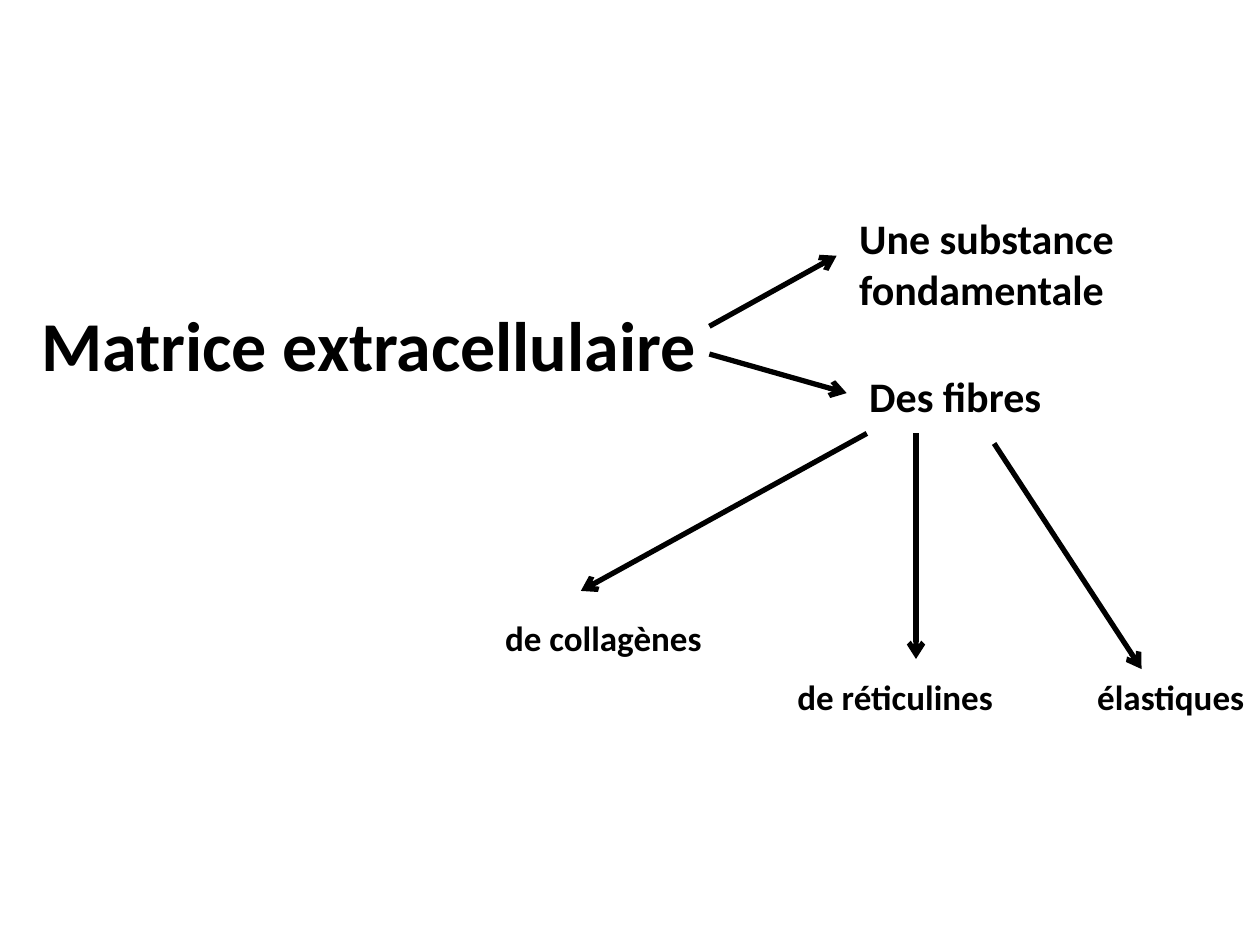
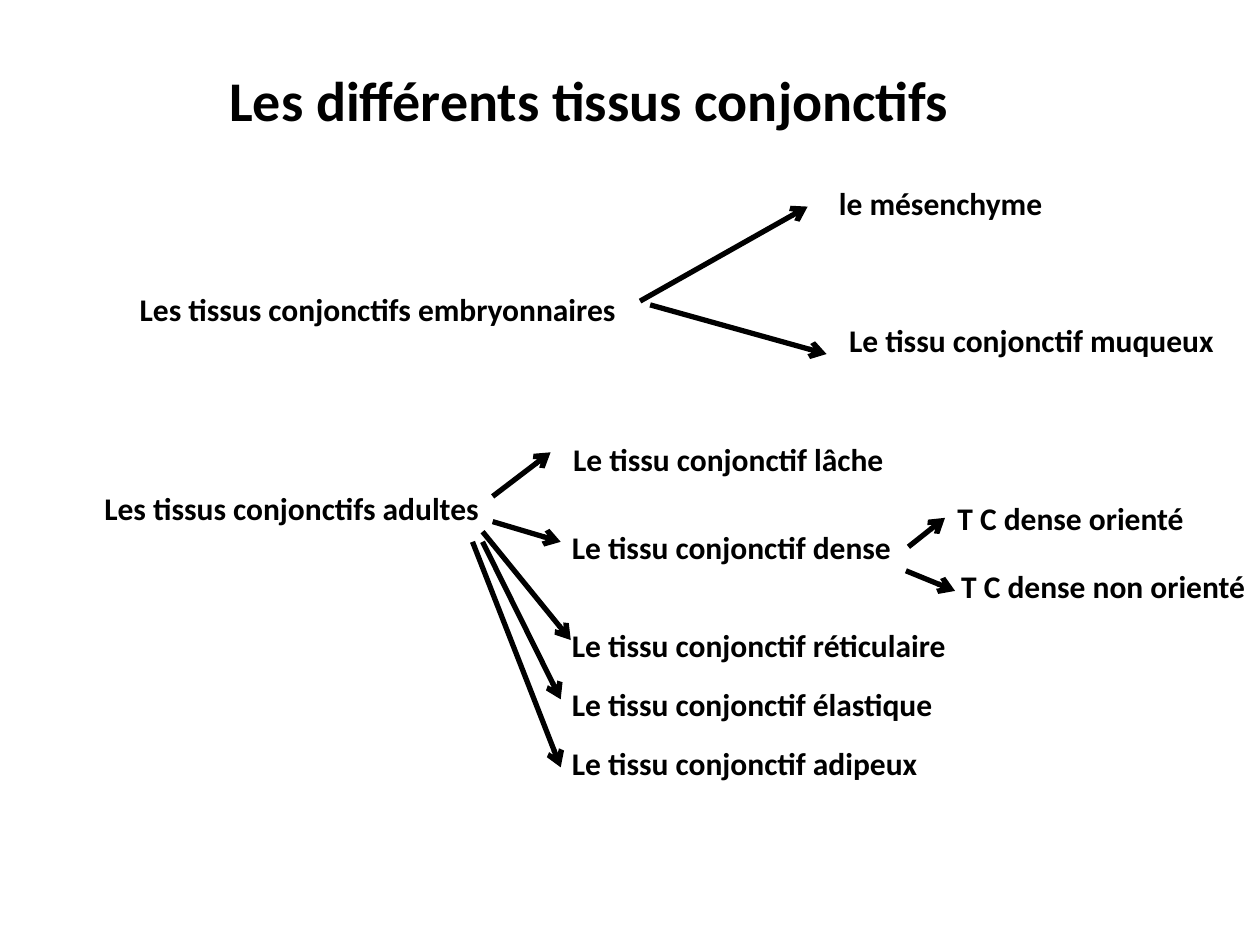
"""Build two diagram slides on the extracellular matrix and connective tissues."""
import pptx
import pptx.dml.color
import pptx.enum.shapes
import pptx.enum.text
import pptx.oxml.ns
import pptx.util
from lxml import etree

Inches = pptx.util.Inches
Anchor = pptx.enum.text.MSO_ANCHOR
BLACK = pptx.dml.color.RGBColor(0x00, 0x00, 0x00)
WHITE = pptx.dml.color.RGBColor(0xFF, 0xFF, 0xFF)
FONT_FORMAT = {"name": "Calibri", "bold": True}
LABEL_HEIGHT = 0.4
ADULT_LEFT = 3.44
ADULT_ROW_TOP = 4.92
ADULT_ROW_STEP = 0.47


def write_label(shape, frame, text, size, level=0, wrap=False, anchor=Anchor.TOP):
    """Place a text shape and give it one bold line of text."""
    for side, length in zip(("left", "top", "width", "height"), frame):
        setattr(shape, side, Inches(length))
    frame_format = {
        "text": text,
        "word_wrap": wrap,
        "vertical_anchor": anchor,
        "auto_size": pptx.enum.text.MSO_AUTO_SIZE.SHAPE_TO_FIT_TEXT,
    }
    for name, value in frame_format.items():
        setattr(shape.text_frame, name, value)
    paragraph = shape.text_frame.paragraphs[0]
    paragraph.level = level
    paragraph.alignment = pptx.enum.text.PP_ALIGN.LEFT
    font = paragraph.runs[0].font
    for name, value in FONT_FORMAT.items():
        setattr(font, name, value)
    font.size = pptx.util.Pt(size)
    font.color.rgb = BLACK


def add_arrow(slide, start, end):
    """Draw a straight black arrow and return it."""
    points = [Inches(length) for length in (*start, *end)]
    arrow = slide.shapes.add_connector(pptx.enum.shapes.MSO_CONNECTOR.STRAIGHT, *points)
    arrow.line.color.rgb = BLACK
    arrow.line.width = pptx.util.Pt(3)
    properties = arrow.element.spPr
    outline = properties.find(pptx.oxml.ns.qn("a:ln"))
    etree.SubElement(outline, pptx.oxml.ns.qn("a:tailEnd"), type="arrow")
    etree.SubElement(properties, pptx.oxml.ns.qn("a:effectLst"))
    return arrow


matrix = {
    "title": ("Matrice extracellulaire", (0.23, 2.34, 5.46, 0.77), 40),
    "labels": [
        ("Une substance fondamentale", (6.72, 1.64, 3.28, 0.91), 24, 0, True),
        ("Des fibres", (6.8, 2.89, 2.34, 0.5), 24, 0, True, Anchor.MIDDLE),
        ("de collagènes", (3.91, 4.84, 1.78, 0.44), 20),
        ("de réticulines", (5.23, 5.31, 2.78, 0.44), 20, 2, False, Anchor.MIDDLE),
        ("élastiques", (7.61, 5.31, 2.39, 0.44), 20, 2, False, Anchor.MIDDLE),
    ],
    "arrows": [
        ((5.63, 2.59), (6.64, 2.03)),
        ((5.63, 2.81), (6.72, 3.12)),
        ((6.88, 3.44), (4.61, 4.69)),
        ((7.27, 3.44), (7.27, 5.23)),
        ((7.89, 3.52), (9.06, 5.31)),
    ],
}

tissues = {
    "title": ("Les différents tissus conjonctifs", (1.72, 0.47, 6.29, 0.64), 32),
    "labels": [
        (text, (left, top, width, LABEL_HEIGHT), 18, level)
        for text, left, top, width, level in [
            ("Les tissus conjonctifs embryonnaires", 0.51, 2.25, 4.52, 1),
            ("le mésenchyme", 6.56, 1.41, 1.83, 0),
            ("Le tissu conjonctif muqueux", 6.64, 2.5, 3.12, 0),
            ("Les tissus conjonctifs adultes", 0.23, 3.83, 3.7, 1),
            ("Le tissu conjonctif lâche", 4.45, 3.44, 2.69, 0),
            ("Le tissu conjonctif dense", ADULT_LEFT, 4.14, 3.77, 2),
            ("T C dense orienté", 7.5, 3.91, 2.01, 0),
            ("T C dense non orienté", 7.53, 4.45, 2.47, 0),
        ]
    ],
    "arrows": [
        ((5.08, 2.39), (6.41, 1.64)),
        ((5.16, 2.42), (6.56, 2.81)),
        ((3.91, 3.94), (4.37, 3.59)),
        ((3.91, 4.14), (4.45, 4.3)),
        ((3.83, 4.22), (4.53, 5.08)),
        ((3.83, 4.3), (4.45, 5.55)),
        ((3.75, 4.3), (4.45, 6.09)),
        ((7.19, 4.53), (7.58, 4.69)),
    ],
}
for row, (kind, width) in enumerate([("réticulaire", 4.21), ("élastique", 4.1), ("adipeux", 3.98)]):
    frame = (ADULT_LEFT, ADULT_ROW_TOP + row * ADULT_ROW_STEP, width, LABEL_HEIGHT)
    tissues["labels"].append((f"Le tissu conjonctif {kind}", frame, 18, 2))

presentation = pptx.Presentation()
presentation.slide_width = Inches(10)
presentation.slide_height = Inches(7.5)
title_only = presentation.slide_layouts[5]
labels = {}

for diagram in (matrix, tissues):
    slide = presentation.slides.add_slide(title_only)
    slide.background.fill.solid()
    slide.background.fill.fore_color.rgb = WHITE
    title, frame, size = diagram["title"]
    write_label(slide.shapes.title, frame, title, size)
    for text, frame, *style in diagram["labels"]:
        labels[text] = slide.shapes.add_textbox(0, 0, 0, 0)
        write_label(labels[text], frame, text, *style)
    for start, end in diagram["arrows"]:
        add_arrow(slide, start, end)

oriented_arrow = add_arrow(slide, (7.21, 4.34), (7.5, 4.11))
oriented_arrow.begin_connect(labels["Le tissu conjonctif dense"], 3)
oriented_arrow.end_connect(labels["T C dense orienté"], 1)

presentation.save("out.pptx")
